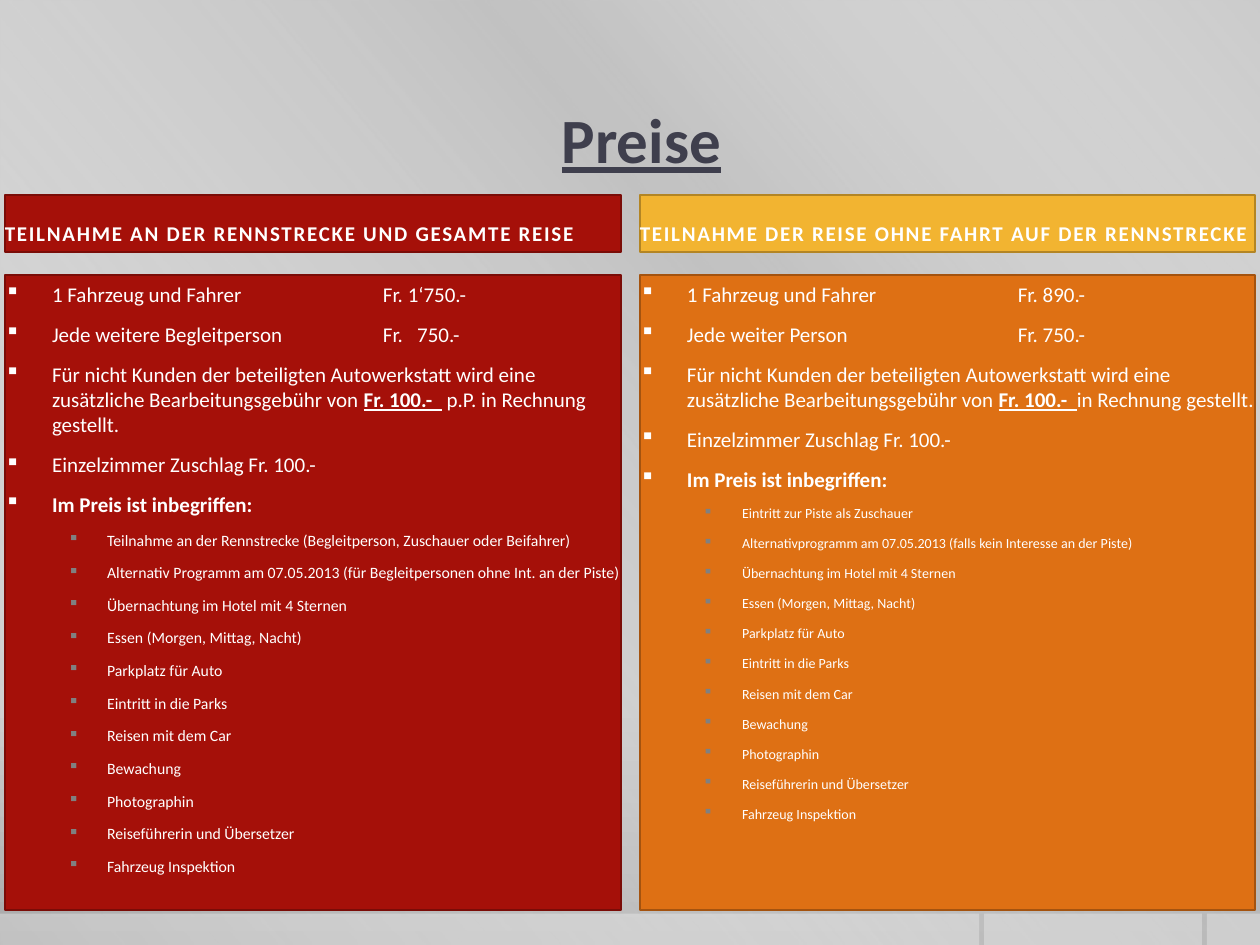
from dataclasses import dataclass

from lxml.etree import SubElement
from pptx import Presentation
from pptx.dml.color import RGBColor
from pptx.enum.shapes import MSO_SHAPE
from pptx.enum.text import MSO_ANCHOR, MSO_AUTO_SIZE, PP_ALIGN
from pptx.oxml.ns import qn
from pptx.util import Cm, Pt

FONT = "Calibri"
WHITE = "FFFFFF"
HEADER_TOP, HEADER_HEIGHT = 3.94, 1.14
BODY_TOP, BODY_HEIGHT = 5.54, 12.8
PRICE_TABS = (7.62, 8.31)

Run = tuple[str, bool]  # text, emphasised


@dataclass
class Level:
    margin: float
    hanging: float
    bullet_color: str


@dataclass
class Column:
    left: float
    width: float
    heading: str
    header_fill: str
    header_line: str
    body_fill: str
    body_line: str
    prices: list[str]
    fee_ending: str
    included: list[str]
    included_size: int


MAIN = Level(0.95, 0.95, WHITE)
SUB = Level(2.06, 0.79, "808080")

SHARED_ITEMS = [
    "Übernachtung im Hotel mit 4 Sternen",
    "Essen (Morgen, Mittag, Nacht)",
    "Parkplatz für Auto",
    "Eintritt in die Parks",
    "Reisen mit dem Car",
    "Bewachung",
    "Photographin",
    "Reiseführerin und Übersetzer",
    "Fahrzeug Inspektion",
]

COLUMNS = [
    Column(
        0.1, 12.42, "TEILNAHME AN DER RENNSTRECKE UND GESAMTE REISE",
        "A51009", "7A0C07", "A51009", "7A0C07",
        ["1 Fahrzeug und Fahrer\tFr. 1‘750.-", "Jede weitere Begleitperson\tFr.\t750.-"],
        " p.P. in Rechnung gestellt.",
        ["Teilnahme an der Rennstrecke (Begleitperson, Zuschauer oder Beifahrer)",
         "Alternativ Programm am 07.05.2013 (für Begleitpersonen ohne Int. an der Piste)"],
        9,
    ),
    Column(
        12.9, 12.4, "TEILNAHME DER REISE OHNE FAHRT AUF DER RENNSTRECKE",
        "F2B431", "B38524", "DE7014", "A4530F",
        ["1 Fahrzeug und Fahrer\tFr. 890.-", "Jede weiter Person\tFr. 750.-"],
        "in Rechnung gestellt.",
        ["Eintritt zur Piste als Zuschauer",
         "Alternativprogramm am 07.05.2013 (falls kein Interesse an der Piste)"],
        8,
    ),
]


def rgb(color: str) -> RGBColor:
    return RGBColor.from_string(color)


def set_gradient(fill, element, stops, angle: int) -> None:
    """Stops are (position, colour, opacity), all but the colour in percent."""
    fill.gradient()
    gradient = next(element.iter(qn("a:gradFill")))
    for child in list(gradient):
        gradient.remove(child)
    stop_list = SubElement(gradient, qn("a:gsLst"))
    for position, color, opacity in stops:
        stop = SubElement(stop_list, qn("a:gs"), pos=str(position * 1000))
        color_element = SubElement(stop, qn("a:srgbClr"), val=color)
        if opacity < 100:
            SubElement(color_element, qn("a:alpha"), val=str(opacity * 1000))
    SubElement(gradient, qn("a:lin"), ang=str(angle * 60000), scaled="0")


def add_rectangle(slide, left, top, width, height, fill=None, line=None, opacity=100):
    shape = slide.shapes.add_shape(
        MSO_SHAPE.RECTANGLE, Cm(left), Cm(top), Cm(width), Cm(height))
    shape.shadow.inherit = False
    if fill:
        shape.fill.solid()
        shape.fill.fore_color.rgb = rgb(fill)
        if opacity < 100:
            color_element = next(shape.element.spPr.iter(qn("a:srgbClr")))
            SubElement(color_element, qn("a:alpha"), val=str(opacity * 1000))
    if line:
        shape.line.color.rgb = rgb(line)
        shape.line.width = Pt(1.1)
    else:
        shape.line.fill.background()
    return shape


def prepare_frame(shape, anchor):
    frame = shape.text_frame
    frame.word_wrap = True
    frame.auto_size = MSO_AUTO_SIZE.NONE
    frame.vertical_anchor = anchor
    frame.margin_left = frame.margin_right = 0
    frame.margin_top = frame.margin_bottom = Cm(0.13)
    return frame


def add_run(paragraph, text, *, size=12, color=WHITE, bold=False, underline=False, spacing=0):
    run = paragraph.add_run()
    run.text = text
    font = run.font
    font.name, font.size, font.color.rgb = FONT, Pt(size), rgb(color)
    font.bold, font.underline = bold, underline
    if spacing:
        font._element.set("spc", str(spacing * 100))


def add_bullet(frame, runs: list[Run], level: Level = MAIN, *, size=12, bold=False, tabs=()):
    paragraph = frame.paragraphs[0]
    if paragraph.runs:
        paragraph = frame.add_paragraph()
        paragraph.space_before = Pt(size * 0.2)
    paragraph.alignment = PP_ALIGN.LEFT
    paragraph.space_after = Pt(6)
    paragraph.level = 1 if level is SUB else 0
    properties = paragraph._p.get_or_add_pPr()
    properties.set("marL", str(Cm(level.margin)))
    properties.set("indent", str(-Cm(level.hanging)))
    bullet_color = SubElement(properties, qn("a:buClr"))
    SubElement(bullet_color, qn("a:srgbClr"), val=level.bullet_color)
    SubElement(properties, qn("a:buChar"), char="▪")
    if tabs:
        tab_list = SubElement(properties, qn("a:tabLst"))
        for position in tabs:
            SubElement(tab_list, qn("a:tab"), pos=str(Cm(position)), algn="l")
    for text, emphasised in runs:
        add_run(paragraph, text, size=size, bold=bold or emphasised, underline=emphasised)


def draw_background(slide) -> None:
    set_gradient(slide.background.fill, slide.element,
                 [(0, "CBCBCB", 100), (76, "C8C8C8", 100), (100, "A7A7A7", 100)], 90)
    sheen = add_rectangle(slide, 0, 0, 25.4, 19.05)
    set_gradient(sheen.fill, sheen.element.spPr,
                 [(0, WHITE, 0), (34, "BFBFBF", 61), (38, "BFBFBF", 76), (100, WHITE, 0)], 140)
    for left, width in ((24.33, 1.07), (19.84, 4.39), (0, 19.74)):
        add_rectangle(slide, left, 18.42, width, 0.63, WHITE, opacity=30)


def draw_title(slide, text: str) -> None:
    title = slide.shapes.title
    title.element.getparent().append(title.element)  # in front of the background
    title.left, title.top, title.width, title.height = Cm(1.5), Cm(1.52), Cm(22.86), Cm(2.54)
    paragraph = prepare_frame(title, MSO_ANCHOR.MIDDLE).paragraphs[0]
    paragraph.alignment = PP_ALIGN.CENTER
    add_run(paragraph, text, size=36, color="3F3F4D", bold=True, underline=True)


def draw_column(slide, column: Column) -> None:
    header = add_rectangle(slide, column.left, HEADER_TOP, column.width, HEADER_HEIGHT,
                           column.header_fill, column.header_line)
    paragraph = prepare_frame(header, MSO_ANCHOR.BOTTOM).paragraphs[0]
    paragraph.alignment = PP_ALIGN.LEFT
    add_run(paragraph, column.heading, bold=True, spacing=1)

    body = add_rectangle(slide, column.left, BODY_TOP, column.width, BODY_HEIGHT,
                         column.body_fill, column.body_line)
    frame = prepare_frame(body, MSO_ANCHOR.TOP)
    for price in column.prices:
        add_bullet(frame, [(price, False)], tabs=PRICE_TABS)
    fee_text = ("Für nicht Kunden der beteiligten Autowerkstatt wird eine "
                "zusätzliche Bearbeitungsgebühr von ")
    add_bullet(frame, [(fee_text, False), ("Fr. 100.-  ", True), (column.fee_ending, False)])
    add_bullet(frame, [("Einzelzimmer Zuschlag Fr. 100.-", False)])
    add_bullet(frame, [("Im Preis ist inbegriffen:", False)], bold=True)
    for item in column.included + SHARED_ITEMS:
        add_bullet(frame, [(item, False)], SUB, size=column.included_size)


def main() -> None:
    presentation = Presentation()
    presentation.slide_width, presentation.slide_height = Cm(25.4), Cm(19.05)
    slide = presentation.slides.add_slide(presentation.slide_layouts[5])
    draw_background(slide)
    draw_title(slide, "Preise")
    for column in COLUMNS:
        draw_column(slide, column)
    presentation.save("out.pptx")


if __name__ == "__main__":
    main()
